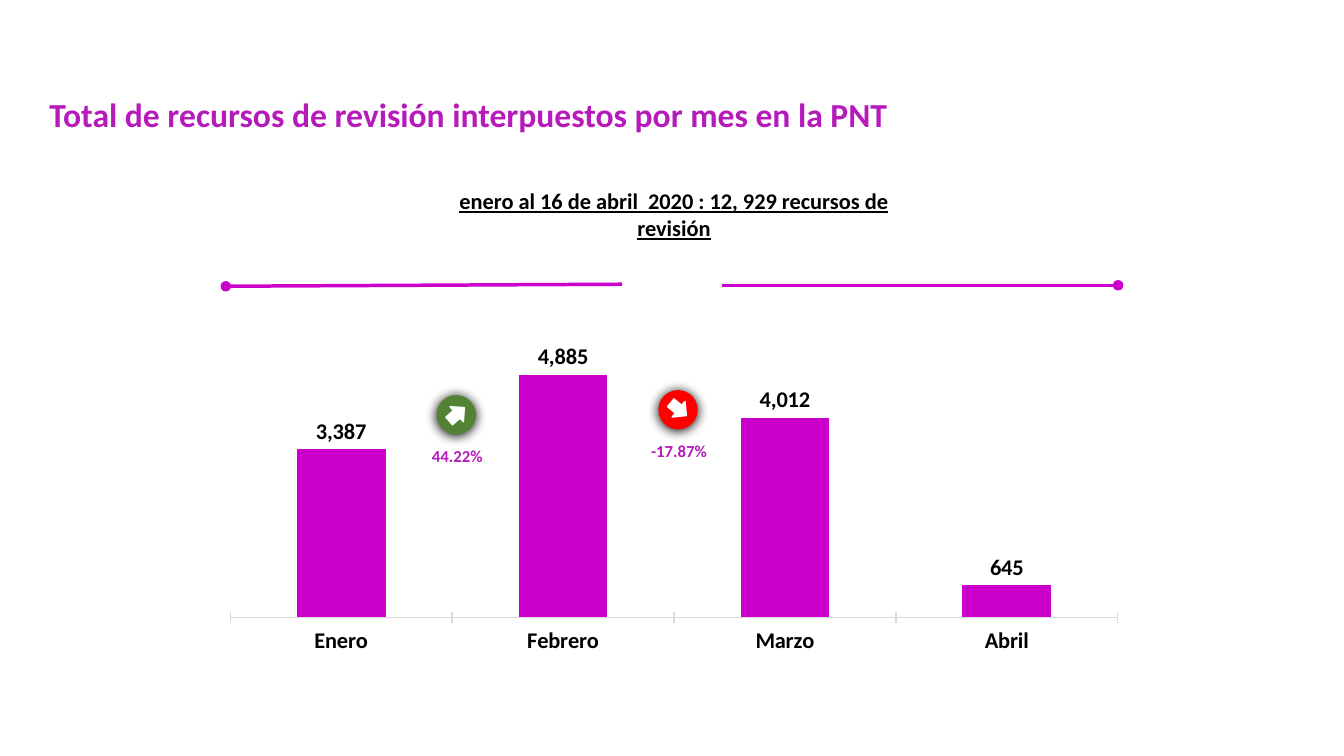
import pptx
import pptx.chart.data
import pptx.dml.color
import pptx.enum.chart
import pptx.enum.shapes
import pptx.enum.text
import pptx.oxml
import pptx.oxml.ns
import pptx.util
from lxml import etree

PX = 9144  # 100 px to the inch
FONT = "Calibri"
MAGENTA, PURPLE = "CC00CC", "B61ABA"
BLACK, WHITE, GREY = "000000", "FFFFFF", "D9D9D9"
GREEN, RED = "548235", "FF0000"
ALIGN = pptx.enum.text.PP_ALIGN
SHAPE = pptx.enum.shapes.MSO_SHAPE


def emu(*lengths):
    return [pptx.util.Emu(length * PX) for length in lengths]


def color(hex_value):
    return pptx.dml.color.RGBColor.from_string(hex_value)


def set_font(font, size, hex_value):
    font.name = FONT
    font.size = pptx.util.Pt(size)
    font.bold = True
    font.color.rgb = color(hex_value)


def set_line(line, hex_value, width):
    line.color.rgb = color(hex_value)
    line.width = pptx.util.Pt(width)


def fill_text(shape, text, size, hex_value, align):
    frame = shape.text_frame
    frame.word_wrap = True
    frame.auto_size = pptx.enum.text.MSO_AUTO_SIZE.SHAPE_TO_FIT_TEXT
    frame.text = text
    paragraph = frame.paragraphs[0]
    paragraph.alignment = align
    set_font(paragraph.font, size, hex_value)
    return paragraph


def add_headings(slide, title_box, period_box):
    title = slide.shapes.title
    title.left, title.top, title.width, title.height = emu(*title_box)
    fill_text(title, "Total de recursos de revisión interpuestos por mes en la PNT",
              24, PURPLE, ALIGN.JUSTIFY)
    period = slide.shapes.add_textbox(*emu(*period_box))
    paragraph = fill_text(period, "enero al 16 de abril  2020 : 12, 929 recursos de revisión",
                          16, BLACK, ALIGN.CENTER)
    paragraph.font.underline = True


def set_plot_layout(chart, x, y, width, height):
    namespace = pptx.oxml.ns.nsdecls("c")
    layout = pptx.oxml.parse_xml(
        f'<c:layout {namespace}><c:manualLayout><c:layoutTarget val="inner"/>'
        f'<c:xMode val="edge"/><c:yMode val="edge"/><c:x val="{x}"/><c:y val="{y}"/>'
        f'<c:w val="{width}"/><c:h val="{height}"/></c:manualLayout></c:layout>')
    plot_area = chart._chartSpace.chart.plotArea
    for old_layout in plot_area.findall(pptx.oxml.ns.qn("c:layout")):
        plot_area.remove(old_layout)
    plot_area.insert(0, layout)


def add_month_chart(slide, box):
    data = pptx.chart.data.CategoryChartData(number_format="#,##0")
    data.categories = ["Enero", "Febrero", "Marzo", "Abril"]
    data.add_series("Recursos", [3387, 4885, 4012, 645])
    chart = slide.shapes.add_chart(
        pptx.enum.chart.XL_CHART_TYPE.COLUMN_CLUSTERED, *emu(*box), data).chart
    chart.has_legend = False
    chart.has_title = False
    set_font(chart.font, 16, BLACK)
    set_plot_layout(chart, 0.02, 0.02, 0.96, 0.85)

    # Columns and their values
    plot = chart.plots[0]
    plot.gap_width = 150
    plot.vary_by_categories = False
    series = plot.series[0]
    series.format.fill.solid()
    series.format.fill.fore_color.rgb = color(MAGENTA)
    labels = series.data_labels
    labels.show_value = True
    labels.position = pptx.enum.chart.XL_LABEL_POSITION.OUTSIDE_END
    labels.number_format = "#,##0"
    labels.number_format_is_linked = False
    set_font(labels.font, 16, BLACK)

    # Axes
    months = chart.category_axis
    months.major_tick_mark = pptx.enum.chart.XL_TICK_MARK.CROSS
    set_line(months.format.line, GREY, 1)
    set_font(months.tick_labels.font, 16, BLACK)
    values = chart.value_axis
    values.minimum_scale, values.maximum_scale = 0, 6000
    values.has_major_gridlines = True
    set_line(values.major_gridlines.format.line, WHITE, 0.75)
    values.visible = False


def add_glow(shape):
    shape.shadow.inherit = False
    effects = shape._element.spPr.find(pptx.oxml.ns.qn("a:effectLst"))
    shadow = etree.SubElement(effects, pptx.oxml.ns.qn("a:outerShdw"),
                              blurRad=str(pptx.util.Pt(8.5)), dist=str(pptx.util.Pt(1)),
                              dir="5400000", algn="ctr", rotWithShape="0")
    etree.SubElement(shadow, pptx.oxml.ns.qn("a:srgbClr"), val=BLACK)


def add_change_badge(slide, left, top, text, fill, arrow_angle):
    shapes = slide.shapes.add_group_shape().shapes
    label = shapes.add_textbox(*emu(left, top + 45, 85, 30))
    fill_text(label, text, 12, PURPLE, ALIGN.CENTER)

    circle = shapes.add_shape(SHAPE.OVAL, *emu(left + 22, top, 39, 39))
    circle.rotation = 318.4
    circle.fill.solid()
    circle.fill.fore_color.rgb = color(fill)
    circle.line.fill.background()
    add_glow(circle)

    arrow = shapes.add_shape(SHAPE.RIGHT_ARROW, *emu(left + 32, top + 9, 20, 20))
    arrow.rotation = arrow_angle
    arrow.fill.solid()
    arrow.fill.fore_color.rgb = color(WHITE)
    set_line(arrow.line, WHITE, 1)
    arrow.shadow.inherit = False


def add_divider(slide, *ends):
    divider = slide.shapes.add_connector(
        pptx.enum.shapes.MSO_CONNECTOR.STRAIGHT, *emu(*ends))
    set_line(divider.line, MAGENTA, 2.5)
    etree.SubElement(divider.line._get_or_add_ln(), pptx.oxml.ns.qn("a:headEnd"), type="oval")
    etree.SubElement(divider._element.spPr, pptx.oxml.ns.qn("a:effectLst"))


def main():
    presentation = pptx.Presentation()
    presentation.slide_width, presentation.slide_height = emu(1333, 750)
    slide = presentation.slides.add_slide(presentation.slide_layouts[5])

    add_headings(slide, (39, 88, 1260, 50), (437, 181, 463, 64))
    add_month_chart(slide, (210, 310, 917, 348))

    # Change from month to month
    add_change_badge(slide, 411, 392, "44.22%", GREEN, 318.4)
    add_change_badge(slide, 631, 387, "-17.87%", RED, 39.3)

    # Lines above the chart, dotted at the outer ends
    add_divider(slide, 224, 284, 617, 282)
    add_divider(slide, 1109, 283, 716, 283)

    presentation.save("out.pptx")


if __name__ == "__main__":
    main()
